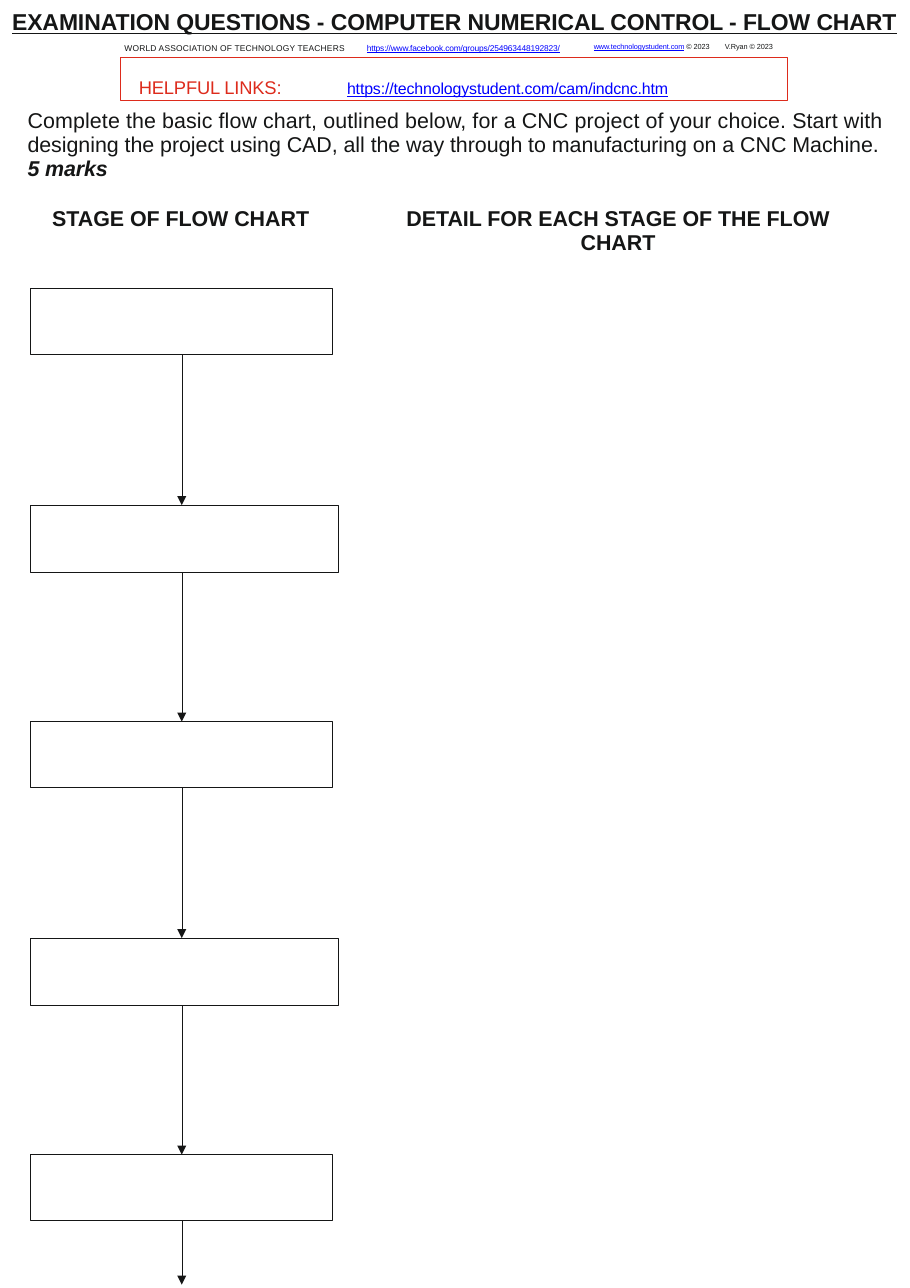
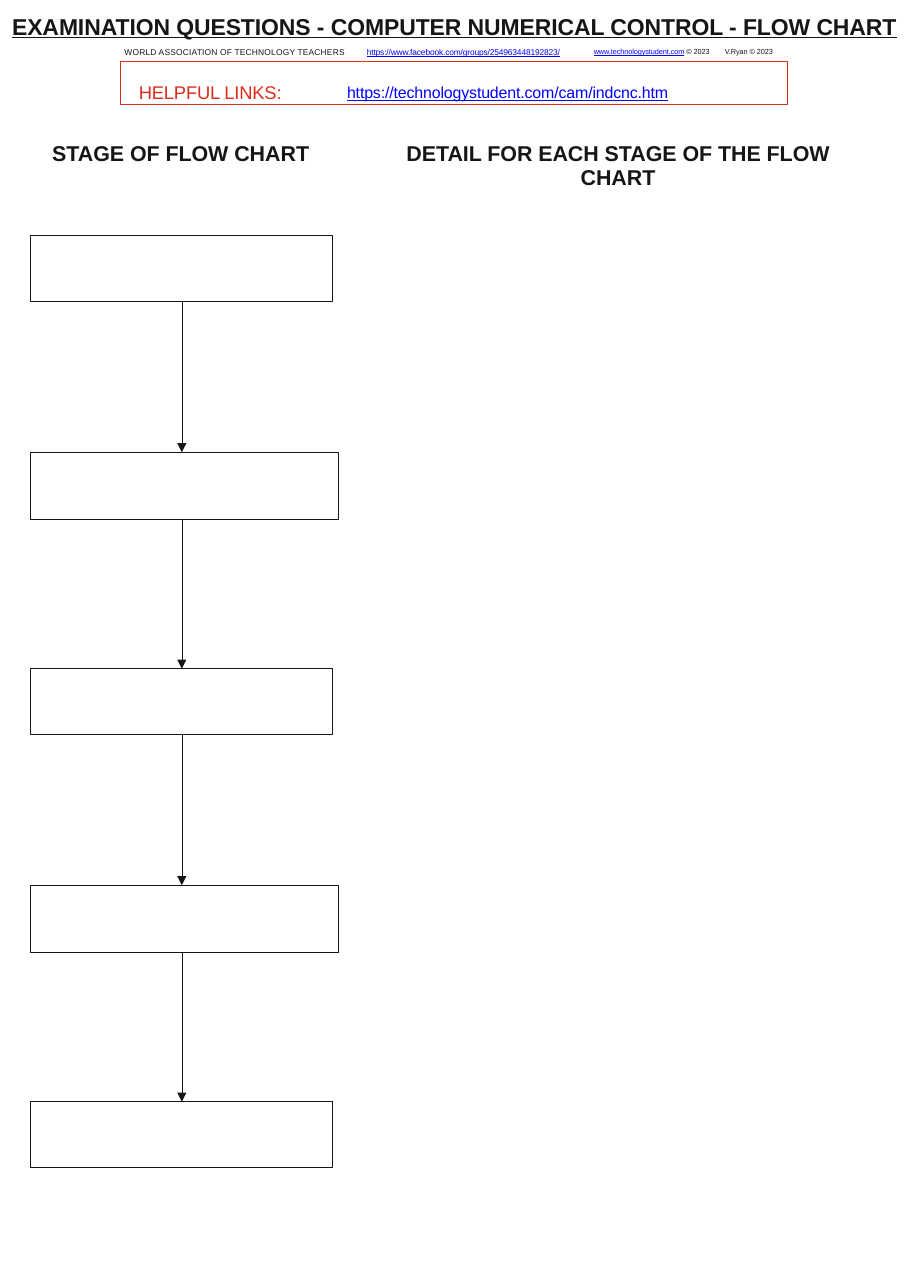
import pptx
import pptx.dml.color
import pptx.enum.shapes
import pptx.enum.text
import pptx.oxml.ns
import pptx.util
from lxml import etree

Inches = pptx.util.Inches
Pt = pptx.util.Pt
RGBColor = pptx.dml.color.RGBColor
ALIGN = pptx.enum.text.PP_ALIGN
SHAPES = pptx.enum.shapes.MSO_SHAPE
qn = pptx.oxml.ns.qn

INK = RGBColor(0x15, 0x16, 0x16)
RED = RGBColor(0xDD, 0x2B, 0x1C)
LINK_BLUE = RGBColor(0x00, 0x00, 0xFF)
FONT = "Arial"

# "spc" is in hundredths of a point, "baseline" in thousandths of a percent.
TITLE = {"size": Pt(15), "bold": True, "underline": True, "spc": -7}
HEADING = {"size": Pt(14), "bold": True, "spc": -6}
BODY_OPENING = {"size": Pt(14), "spc": 7}
BODY = {"size": Pt(14), "spc": -6}
MARKS = {"size": Pt(14), "bold": True, "italic": True, "spc": -10}
CREDIT = {"size": Pt(5.5), "spc": 10}
CREDIT_LINK = {"size": Pt(5.5), "underline": True, "color": LINK_BLUE, "spc": -10}
RAISED = {"size": Pt(8.2), "baseline": 10000}
RAISED_LINK = {**RAISED, "underline": True, "color": LINK_BLUE}
LABEL = {"size": Pt(12), "color": RED, "spc": -10}
HELP_LINK = {"size": Pt(18), "underline": True, "color": LINK_BLUE,
             "spc": -10, "baseline": 2000}

LINE_PITCH = Pt(15.6)
STAGES = 5
STAGE_LEFT = 0.28
STAGE_SIZES = [(2.74, 0.6), (2.79, 0.61)]  # narrow and wide boxes alternate
STAGE_PITCH = 7.86 / (STAGES - 1)


def add_span(para, text, style):
    span = para.add_run()
    span.text = text
    settings = {"name": FONT, "color": INK, **style}
    span.font.color.rgb = settings.pop("color")
    for name, value in settings.items():
        if name in ("spc", "baseline"):
            span._r.get_or_add_rPr().set(name, str(value))
        else:
            setattr(span.font, name, value)


def add_tabs(para, stops):
    tab_list = etree.SubElement(para._p.get_or_add_pPr(), qn("a:tabLst"))
    for stop in stops:
        etree.SubElement(tab_list, qn("a:tab"), pos=str(Inches(stop)), algn="l")


def fill_text(box, paras, insets=(0, 0), tabs=(), **para_format):
    """Write paragraphs, each a list of (text, style); insets are left, top."""
    frame = box.text_frame
    frame_format = {
        "word_wrap": True,
        "vertical_anchor": pptx.enum.text.MSO_ANCHOR.TOP,
        "margin_left": Inches(insets[0]),
        "margin_top": Inches(insets[1]),
        "margin_right": 0,
        "margin_bottom": 0,
    }
    for name, value in frame_format.items():
        setattr(frame, name, value)
    for index, spans in enumerate(paras):
        para = frame.paragraphs[0] if index == 0 else frame.add_paragraph()
        if tabs:
            add_tabs(para, tabs)
        for name, value in {"alignment": ALIGN.LEFT, **para_format}.items():
            setattr(para, name, value)
        for text, style in spans:
            add_span(para, text, style)


def add_text(page, place, paras, **options):
    box = page.shapes.add_textbox(*map(Inches, place))
    fill_text(box, paras, **options)


def add_outline(page, place, color, width):
    box = page.shapes.add_shape(SHAPES.RECTANGLE, *map(Inches, place))
    box.shadow.inherit = False
    box.fill.background()
    box.line.color.rgb = color
    box.line.width = Pt(width)
    return box


def add_down_arrow(page, x, top, bottom):
    arrow = page.shapes.add_connector(
        pptx.enum.shapes.MSO_CONNECTOR.STRAIGHT, x, top, x, bottom)
    arrow.line.color.rgb = INK
    arrow.line.width = Pt(0.25)
    etree.SubElement(arrow.line._get_or_add_ln(), qn("a:tailEnd"), type="triangle")
    etree.SubElement(arrow._element.spPr, qn("a:effectLst"))
    return arrow


def add_header(page, top):
    add_text(page, (0.11, top, 8.15, 0.26), [[
        ("EXAMINATION QUESTIONS - COMPUTER NUMERICAL CONTROL - FLOW CHART", TITLE)]])
    add_text(page, (1.13, top + 0.28, 6.2, 0.14), [[
        ("WORLD ASSOCIATION OF TECHNOLOGY TEACHERS\t", CREDIT),
        ("https://www.facebook.com/groups/254963448192823/", CREDIT_LINK),
        ("\t", CREDIT),
        ("www.technologystudent.com", RAISED_LINK),
        (" © 2023\tV.Ryan © 2023", RAISED),
    ]], tabs=(2.2, 4.26, 5.45))
    links = add_outline(page, (1.09, top + 0.45, 6.06, 0.39), RED, 0.57)
    fill_text(links, [[
        ("HELPFUL LINKS:\t", LABEL),
        ("https://technologystudent.com/cam/indcnc.htm", HELP_LINK),
    ]], insets=(0.17, 0.09), tabs=(1.89,))


def add_task(page):
    add_text(page, (0.25, 0.99, 7.85, 0.67), [
        [("Complete the basic flow chart, outlined below, for a CNC project of "
          "your choice. Start with ", BODY_OPENING),
         ("designing the project using CAD, all the way through to "
          "manufacturing on a CNC Machine.", BODY)],
        [("5 marks", MARKS)],
    ], line_spacing=LINE_PITCH)


def add_headings(page, top):
    columns = [(0.44, 2.4, "STAGE OF FLOW CHART"),
               (3.61, 4, "DETAIL FOR EACH STAGE OF THE FLOW CHART")]
    for left, width, text in columns:
        add_text(page, (left, top, width, 0.46), [[(text, HEADING)]],
                 alignment=ALIGN.CENTER, line_spacing=LINE_PITCH)


def add_flow(page, top):
    """Stack the stage boxes, join them by arrows and return the last box."""
    stages = []
    for index in range(STAGES):
        place = (STAGE_LEFT, top + index * STAGE_PITCH, *STAGE_SIZES[index % 2])
        stages.append(add_outline(page, place, INK, 0.5))
    axis = stages[0].left + stages[0].width // 2
    for index, (upper, lower) in enumerate(zip(stages, stages[1:])):
        arrow = add_down_arrow(page, axis, upper.top + upper.height, lower.top)
        # Only the narrow boxes are centred on the axis of the arrows.
        if index % 2 == 0:
            arrow.begin_connect(upper, 2)
        else:
            arrow.end_connect(lower, 0)
    return stages[-1]


def add_continuation(page, stage):
    axis = stage.left + stage.width // 2
    arrow = add_down_arrow(page, axis, stage.top + stage.height, Inches(11.66))
    arrow.begin_connect(stage, 2)


def main():
    deck = pptx.Presentation()
    deck.slide_width = Inches(8.26)
    deck.slide_height = Inches(11.69)
    blank = deck.slide_layouts[6]

    first = deck.slides.add_slide(blank)
    add_header(first, 0.07)
    add_task(first)
    add_headings(first, 1.88)
    add_continuation(first, add_flow(first, 2.62))

    second = deck.slides.add_slide(blank)
    add_header(second, 0.11)
    add_headings(second, 1.29)
    add_flow(second, 2.14)

    deck.save("out.pptx")


if __name__ == "__main__":
    main()
